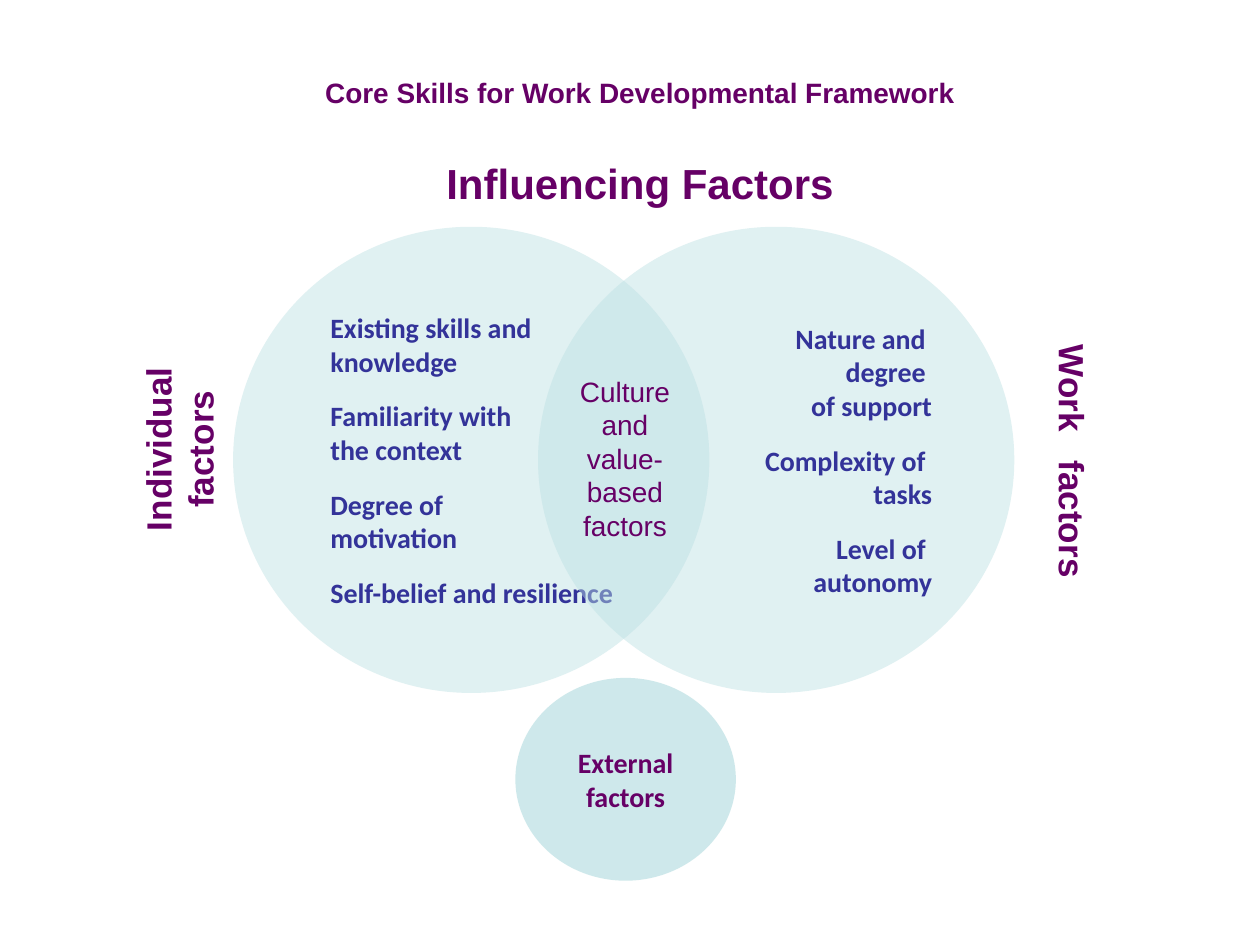
from lxml import etree
from pptx import Presentation
from pptx.dml.color import RGBColor
from pptx.enum.shapes import MSO_SHAPE
from pptx.enum.text import MSO_ANCHOR, MSO_AUTO_SIZE, PP_ALIGN
from pptx.oxml.ns import qn
from pptx.util import Inches, Pt

LEFT, CENTER, RIGHT = PP_ALIGN.LEFT, PP_ALIGN.CENTER, PP_ALIGN.RIGHT
OVAL = MSO_SHAPE.OVAL
TITLE_ONLY = 5

THEME = {
    "plum": RGBColor(0x66, 0x00, 0x66),
    "indigo": RGBColor(0x33, 0x33, 0x99),
    "circle": RGBColor(0xBB, 0xE0, 0xE3),
    "body": "Calibri", "label": "Arial",
    "small": Pt(16), "medium": Pt(20), "large": Pt(24),
    "item_gap": Pt(12), "title_gap": Pt(27.6), "word_gap": Pt(11),
}

TITLE_BOX = (2.01, 0.55, 6.14, 1.18)
TITLE_LINES = [("Core Skills for Work Developmental Framework", "small"),
               ("Influencing Factors", "large")]

INDIVIDUAL = ["Existing skills and knowledge", "Familiarity with \nthe context",
              "Degree of \nmotivation", "Self-belief and resilience"]
WORK = ["Nature and \ndegree \nof support", "Complexity of \ntasks",
        "Level of \nautonomy"]

# box, opacity %, texts, alignment, colour, left indent, space after
CIRCLES = [
    ((1.85, 1.8, 3.78, 3.7), 45, INDIVIDUAL, LEFT, "indigo", 0.12, "item_gap"),
    ((4.09, 5.38, 1.75, 1.61), 71, ["External factors"], CENTER, "plum", 0, None),
    ((4.27, 1.8, 3.78, 3.7), 45, WORK, RIGHT, "indigo", 0, "item_gap"),
]

# box, rotation, runs, size, bold
LABELS = [
    ((4.45, 2.92, 1.02, 1.45), 0, ["Culture and value-based factors"], "small", False),
    ((0.12, 3.18, 2.6, 0.77), 270, ["Individual\nfactors"], "medium", True),
    ((7.21, 3.44, 2.6, 0.44), 90, ["Work", " ", "factors"], "medium", True),
]


def inches(box):
    return [Inches(v) for v in box]


def add_run(p, text, font, size, color, bold=True):
    """Add text to a paragraph, turning each newline into a line break."""
    for i, line in enumerate(text.split("\n")):
        if i:
            p.add_line_break()
        r = p.add_run()
        r.text = line
        r.font.name, r.font.size, r.font.bold = THEME[font], THEME[size], bold
        r.font.color.rgb = THEME[color]
    return r


def paragraphs(tf, count, align):
    """Return the frame's first paragraph and as many new ones as needed."""
    result = [tf.paragraphs[0]] + [tf.add_paragraph() for _ in range(count - 1)]
    for p in result:
        p.alignment = align
    return result


def add_title(slide):
    sp = slide.shapes.title
    sp.left, sp.top, sp.width, sp.height = inches(TITLE_BOX)
    tf = sp.text_frame
    tf.word_wrap = True
    tf.auto_size = MSO_AUTO_SIZE.NONE
    tf.vertical_anchor = MSO_ANCHOR.TOP
    ps = paragraphs(tf, len(TITLE_LINES), CENTER)
    for p, (text, size) in zip(ps, TITLE_LINES):
        add_run(p, text, "label", size, "plum")
    ps[1].space_before = THEME["title_gap"]


def add_circle(slide, box, opacity, texts, align, color, indent, gap):
    sp = slide.shapes.add_shape(OVAL, *inches(box))
    sp.shadow.inherit = False
    sp.line.fill.background()
    sp.fill.solid()
    sp.fill.fore_color.rgb = THEME["circle"]
    clr = sp._element.spPr.find(qn("a:solidFill"))[0]
    etree.SubElement(clr, qn("a:alpha")).set("val", str(opacity * 1000))
    tf = sp.text_frame
    tf.word_wrap = True
    tf.vertical_anchor = MSO_ANCHOR.MIDDLE
    for p, text in zip(paragraphs(tf, len(texts), align), texts):
        if indent:
            p._p.get_or_add_pPr().set("marL", str(Inches(indent)))
        if gap:
            p.space_after = THEME[gap]
        add_run(p, text, "body", "small", color)


def add_label(slide, box, rotation, runs, size, bold):
    sp = slide.shapes.add_textbox(*inches(box))
    sp.rotation = rotation
    tf = sp.text_frame
    tf.word_wrap = True
    tf.auto_size = MSO_AUTO_SIZE.SHAPE_TO_FIT_TEXT
    p = paragraphs(tf, 1, CENTER)[0]
    for text in runs:
        r = add_run(p, text, "label", size, "plum", bold)
        if text == " ":  # widen the gap between words by letter spacing
            r.font._element.set("spc", str(int(THEME["word_gap"].pt * 100)))


def main():
    prs = Presentation()
    prs.slide_width, prs.slide_height = Inches(10), Inches(7.5)
    slide = prs.slides.add_slide(prs.slide_layouts[TITLE_ONLY])
    add_title(slide)
    for circle in CIRCLES:
        add_circle(slide, *circle)
    for label in LABELS:
        add_label(slide, *label)
    prs.save("out.pptx")


if __name__ == "__main__":
    main()
